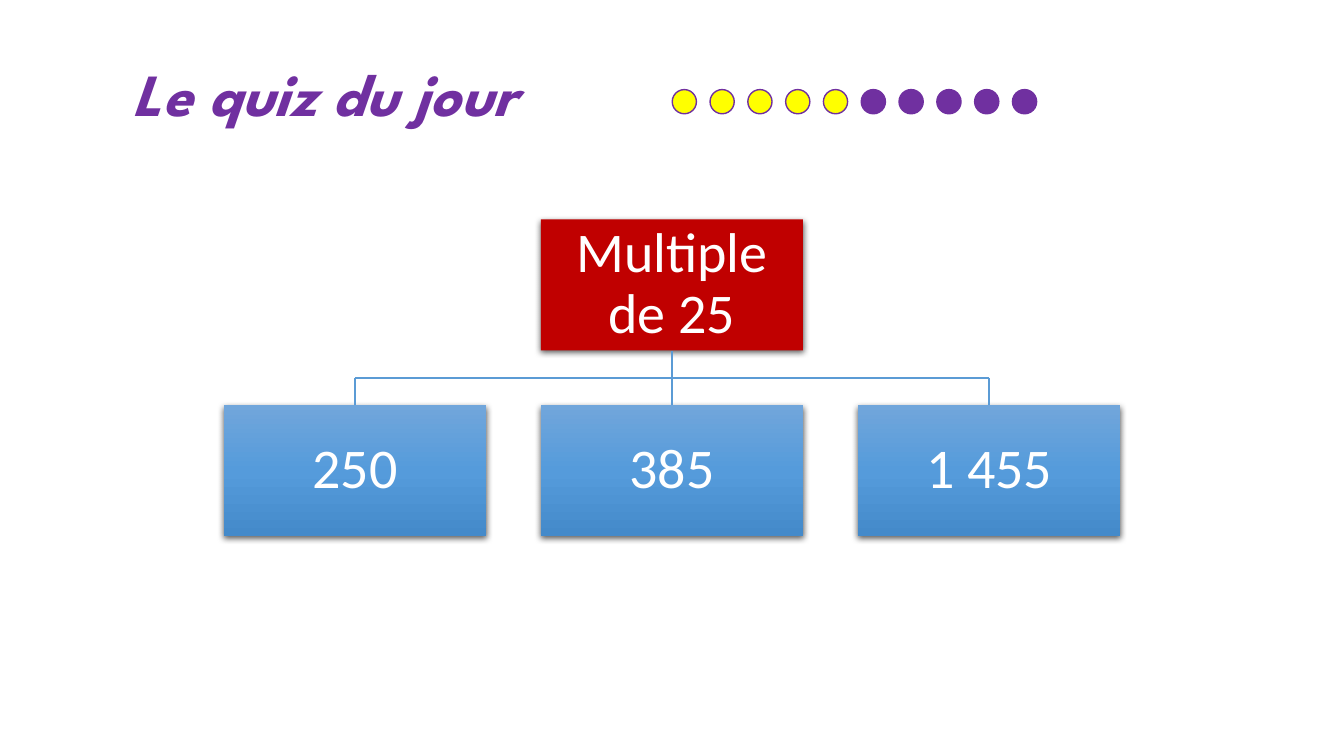
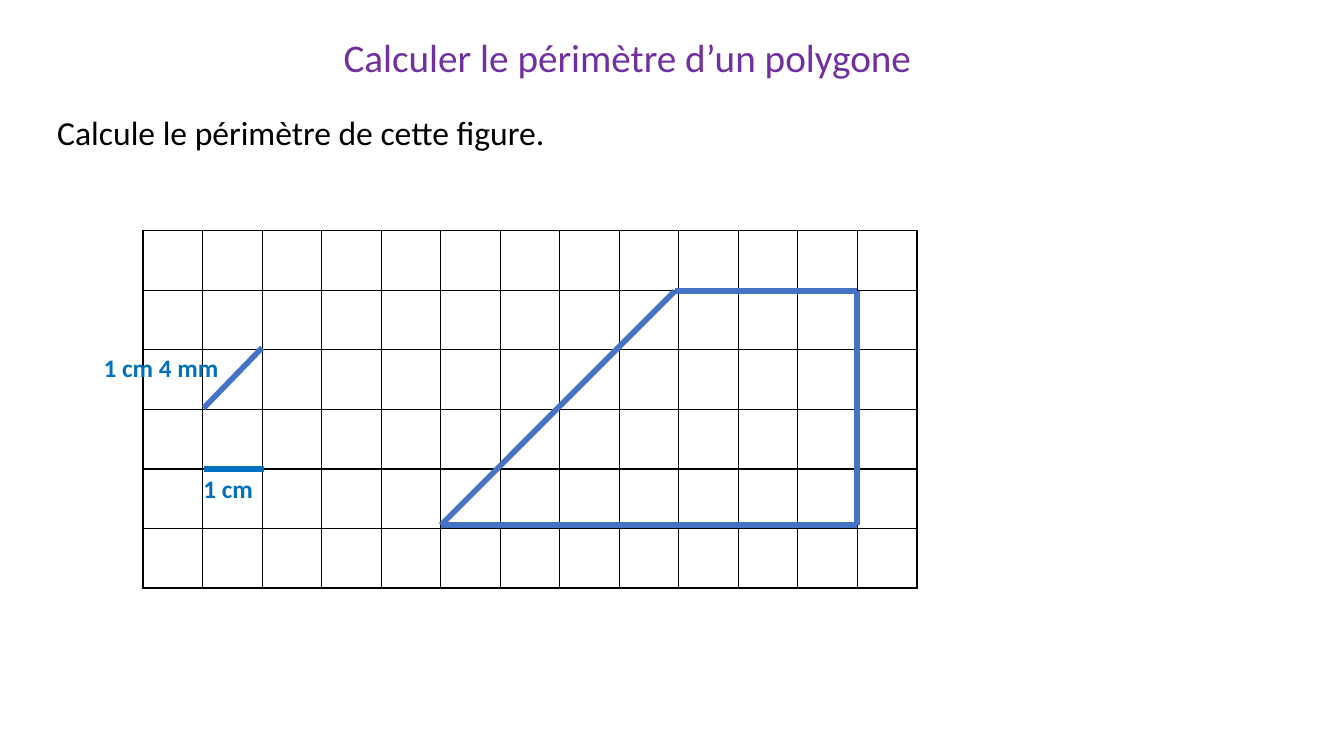
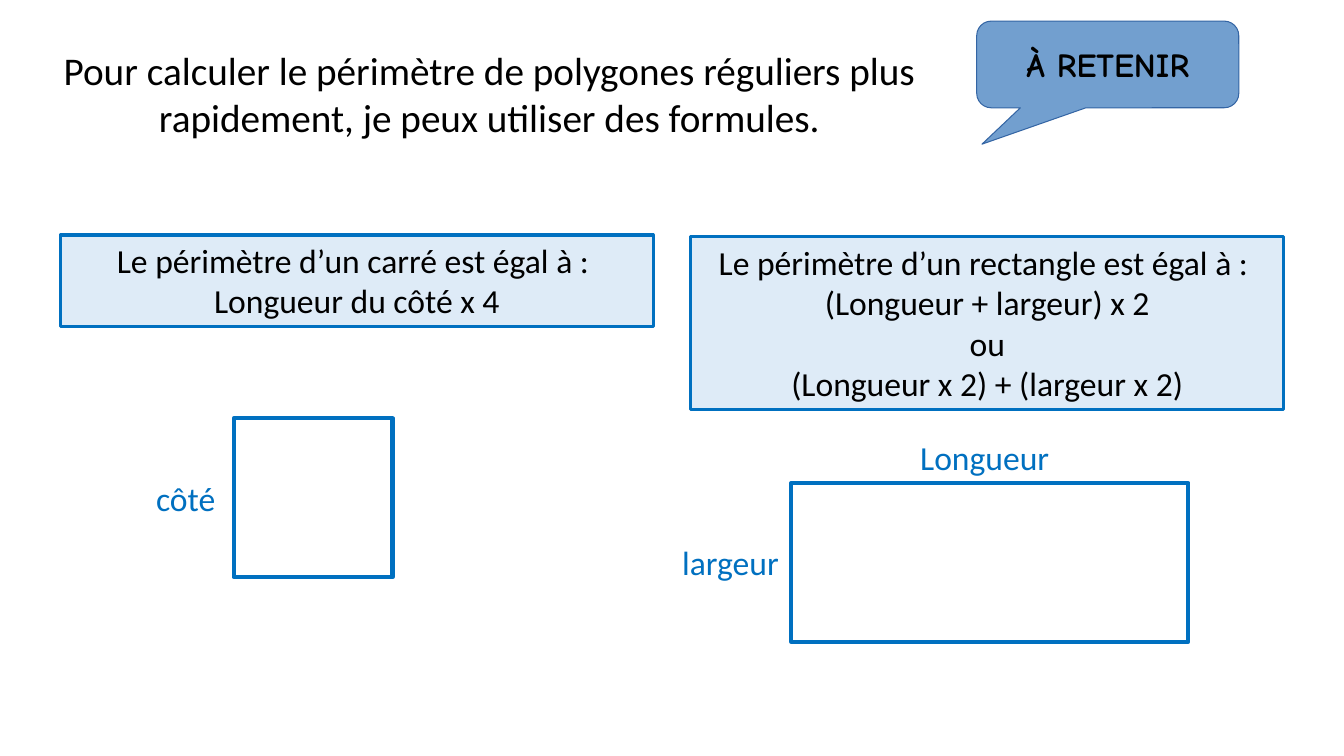
from itertools import pairwise

from pptx import Presentation
from pptx.dml.color import RGBColor
from pptx.enum.shapes import MSO_CONNECTOR, MSO_SHAPE
from pptx.enum.text import MSO_ANCHOR, PP_ALIGN
from pptx.oxml import parse_xml
from pptx.oxml.ns import nsdecls
from pptx.util import Pt

WHITE = RGBColor(0xFF, 0xFF, 0xFF)
BLACK = RGBColor(0x00, 0x00, 0x00)
PURPLE = RGBColor(0x70, 0x30, 0xA0)
YELLOW = RGBColor(0xFF, 0xFF, 0x00)
RED = RGBColor(0xC0, 0x00, 0x00)
BLUE = RGBColor(0x00, 0x70, 0xC0)
FIGURE_BLUE = RGBColor(0x44, 0x72, 0xC4)
TREE_BLUE = RGBColor(0x5B, 0x9B, 0xD5)
PALE_BLUE = RGBColor(0xDE, 0xEB, 0xF7)
CALLOUT_FILL = RGBColor(0x72, 0x9F, 0xCF)
CALLOUT_LINE = RGBColor(0x34, 0x65, 0xA4)
ANSWER_GRADIENT = ((0, RGBColor(0x71, 0xA6, 0xDB)),
                   (50, RGBColor(0x55, 0x9B, 0xDB)),
                   (100, RGBColor(0x44, 0x8A, 0xCA)))

BODY_FONT = "Calibri"
TITLE_FONT = "League Spartan"
CALLOUT_FONT = "Comic Neue"

# Boxes are (left, top, width, height) in points.
QUIZ_TITLE = ("Le quiz du jour", (87.8, 42.5, 331, 58.3))
QUESTION = "Multiple de 25"
ANSWERS = ("250", "385", "1 455")
TREE_CENTRE, QUESTION_TOP, ANSWER_TOP = 480, 156.8, 289.5
TREE_WIDTH, TREE_HEIGHT, ANSWER_PITCH = 187.2, 93.6, 226.5
DOTS, DOTS_DONE = 10, 5
DOT_LEFT, DOT_TOP, DOT_SIZE, DOT_PITCH = 480.2, 64, 17.3, 27

LESSON_TITLE = ("Calculer le périmètre d’un polygone", (238.3, 10, 440, 47.5))
INSTRUCTION = ("Calcule le périmètre de cette figure.", (33.8, 76.3, 832, 36))
GRID_LEFT, GRID_TOP, GRID_CELL = 102.2, 164.9, 42.52
GRID_ROWS, GRID_COLUMNS = 6, 13
TRAPEZOID = ((482, 208), (612, 208), (612, 375), (315, 375))
UNIT_LINES = (((146, 334.8), (188.6, 334.8), BLUE),
              ((145.4, 291.6), (187.2, 248.4), FIGURE_BLUE))
UNIT_LABELS = (("1 cm 4 mm", (67, 248.4, 114, 29)),
               ("1 cm", (138.2, 334.8, 57.6, 29)))

CALLOUT = ("À RETENIR", (697.7, 15.1, 187.2, 61.9))
RULE = ("Pour calculer le périmètre de polygones réguliers plus rapidement, "
        "je peux utiliser des formules.", (29.5, 29.5, 640, 75))
FORMULAS = (
    (("Le périmètre d’un carré est égal à : ", "Longueur du côté x 4"),
     (43.2, 167.8, 423.4, 65.4)),
    (("Le périmètre d’un rectangle est égal à : ", "(Longueur + largeur) x 2",
      "ou", "(Longueur x 2) + (largeur x 2)"),
     (493.5, 169.2, 423.4, 123.6)),
)
FIGURES = ((167, 298.8, 113.4, 113.4), (565.2, 345, 283.6, 113.4))
SIDE_LABELS = (("côté", (104.4, 337.7, 73.4, 36)),
               ("largeur", (480.2, 383.8, 97.9, 36)),
               ("Longueur", (650.2, 308.9, 113, 36)))


def in_points(values):
    return [Pt(value) for value in values]


def write(shape, lines, size, color, font=BODY_FONT, bold=False, italic=False,
          align=PP_ALIGN.LEFT, anchor=MSO_ANCHOR.TOP, spacing=None):
    frame = shape.text_frame
    frame.word_wrap = True
    frame.vertical_anchor = anchor
    for index, line in enumerate(lines):
        paragraph = frame.add_paragraph() if index else frame.paragraphs[0]
        paragraph.alignment = align
        if spacing:
            paragraph.line_spacing = spacing
        run = paragraph.add_run()
        run.text = line
        run.font.name = font
        run.font.size = Pt(size)
        run.font.bold = bold
        run.font.italic = italic
        run.font.color.rgb = color


def add_label(slide, text, box, size, color, **style):
    write(slide.shapes.add_textbox(*in_points(box)), [text], size, color, **style)


def add_box(slide, box, fill, line=None, line_width=1, kind=MSO_SHAPE.RECTANGLE):
    shape = slide.shapes.add_shape(kind, *in_points(box))
    shape.shadow.inherit = False
    shape.fill.solid()
    shape.fill.fore_color.rgb = fill
    if line is None:
        shape.line.fill.background()
    else:
        shape.line.color.rgb = line
        shape.line.width = Pt(line_width)
    return shape


def add_line(slide, start, end, color, width):
    line = slide.shapes.add_connector(MSO_CONNECTOR.STRAIGHT, *in_points(start + end))
    line.line.color.rgb = color
    line.line.width = Pt(width)
    line._element.spPr.append(parse_xml(f'<a:effectLst {nsdecls("a")}/>'))
    return line


def set_gradient(shape, stops):
    """Replace the solid fill by a gradient from top to bottom."""
    stops_xml = "".join(
        f'<a:gs pos="{position * 1000}"><a:srgbClr val="{color}"/></a:gs>'
        for position, color in stops)
    gradient = parse_xml(
        f'<a:gradFill {nsdecls("a")} rotWithShape="1"><a:gsLst>{stops_xml}</a:gsLst>'
        '<a:lin ang="5400000" scaled="0"/></a:gradFill>')
    properties = shape._element.spPr
    properties.replace(properties.find(f"{{{gradient.nsmap['a']}}}solidFill"), gradient)


def add_soft_shadow(shape):
    effects = shape._element.spPr.effectLst
    effects.append(parse_xml(
        f'<a:outerShdw {nsdecls("a")} blurRad="{Pt(4.5)}" dist="{Pt(1.5)}" '
        'dir="5400000" algn="ctr" rotWithShape="0"><a:srgbClr val="000000">'
        '<a:alpha val="63000"/></a:srgbClr></a:outerShdw>'))


def add_tree_box(slide, text, centre, top, fill):
    box = (centre - TREE_WIDTH / 2, top, TREE_WIDTH, TREE_HEIGHT)
    shape = add_box(slide, box, fill)
    add_soft_shadow(shape)
    frame = shape.text_frame
    frame.margin_left = frame.margin_right = Pt(2)
    frame.margin_top = frame.margin_bottom = Pt(2)
    write(shape, [text], 40, WHITE, align=PP_ALIGN.CENTER,
          anchor=MSO_ANCHOR.MIDDLE, spacing=0.9)
    return shape


def add_answer_tree(slide):
    question = add_tree_box(slide, QUESTION, TREE_CENTRE, QUESTION_TOP, RED)
    question_bottom = QUESTION_TOP + TREE_HEIGHT
    bar_y = (question_bottom + ANSWER_TOP) / 2
    middle = (len(ANSWERS) - 1) / 2
    centres = [TREE_CENTRE + (index - middle) * ANSWER_PITCH
               for index in range(len(ANSWERS))]
    for text, centre in zip(ANSWERS, centres):
        answer = add_tree_box(slide, text, centre, ANSWER_TOP, TREE_BLUE)
        set_gradient(answer, ANSWER_GRADIENT)
        drop = add_line(slide, (centre, bar_y), (centre, ANSWER_TOP), TREE_BLUE, 1)
        drop.end_connect(answer, 0)
    stem = add_line(slide, (TREE_CENTRE, question_bottom), (TREE_CENTRE, bar_y),
                    TREE_BLUE, 1)
    stem.begin_connect(question, 2)
    add_line(slide, (centres[0], bar_y), (centres[-1], bar_y), TREE_BLUE, 1)


def add_cell_borders(cell):
    properties = cell._tc.get_or_add_tcPr()
    for index, side in enumerate(("lnL", "lnR", "lnT", "lnB")):
        properties.insert(index, parse_xml(
            f'<a:{side} {nsdecls("a")} w="{Pt(1)}"><a:solidFill>'
            f'<a:srgbClr val="{BLACK}"/></a:solidFill></a:{side}>'))


def add_grid(slide):
    box = (GRID_LEFT, GRID_TOP, GRID_COLUMNS * GRID_CELL, GRID_ROWS * GRID_CELL)
    table = slide.shapes.add_table(GRID_ROWS, GRID_COLUMNS, *in_points(box)).table
    table.first_row = table.horz_banding = False
    for column in table.columns:
        column.width = Pt(GRID_CELL)
    for row in table.rows:
        row.height = Pt(GRID_CELL)
    for cell in table.iter_cells():
        cell.fill.background()
        add_cell_borders(cell)


def build_quiz(slide):
    add_answer_tree(slide)
    add_label(slide, *QUIZ_TITLE, 42.7, PURPLE, font=TITLE_FONT, bold=True,
              italic=True, spacing=0.9)
    for index in range(DOTS):
        box = (DOT_LEFT + index * DOT_PITCH, DOT_TOP, DOT_SIZE, DOT_SIZE)
        fill = YELLOW if index < DOTS_DONE else PURPLE
        add_box(slide, box, fill, PURPLE, kind=MSO_SHAPE.OVAL)


def build_exercise(slide):
    add_label(slide, *INSTRUCTION, 24, BLACK)
    add_label(slide, *LESSON_TITLE, 28, PURPLE, spacing=1.3)
    add_grid(slide)
    for text, box in UNIT_LABELS:
        add_label(slide, text, box, 18, BLUE, bold=True)
    for start, end in pairwise(TRAPEZOID + TRAPEZOID[:1]):
        add_line(slide, start, end, FIGURE_BLUE, 4)
    for start, end, color in UNIT_LINES:
        add_line(slide, start, end, color, 4)


def build_summary(slide):
    text, box = CALLOUT
    callout = add_box(slide, box, CALLOUT_FILL, CALLOUT_LINE, 0.75,
                      MSO_SHAPE.ROUNDED_RECTANGULAR_CALLOUT)
    callout.adjustments[0] = -0.48
    callout.adjustments[1] = 0.92
    write(callout, [text], 24, BLACK, font=CALLOUT_FONT, bold=True,
          align=PP_ALIGN.CENTER, anchor=MSO_ANCHOR.MIDDLE)
    add_label(slide, *RULE, 28, BLACK, align=PP_ALIGN.CENTER)
    for lines, box in FORMULAS:
        panel = add_box(slide, box, PALE_BLUE, BLUE, 2.25)
        write(panel, lines, 24, BLACK, align=PP_ALIGN.CENTER)
    for text, box in SIDE_LABELS:
        add_label(slide, text, box, 24, BLUE)
    for box in FIGURES:
        add_box(slide, box, WHITE, BLUE, 3)


def main():
    presentation = Presentation()
    presentation.slide_width, presentation.slide_height = Pt(960), Pt(540)
    blank = presentation.slide_layouts[6]
    for build in (build_quiz, build_exercise, build_summary):
        build(presentation.slides.add_slide(blank))
    presentation.save("out.pptx")


if __name__ == "__main__":
    main()
